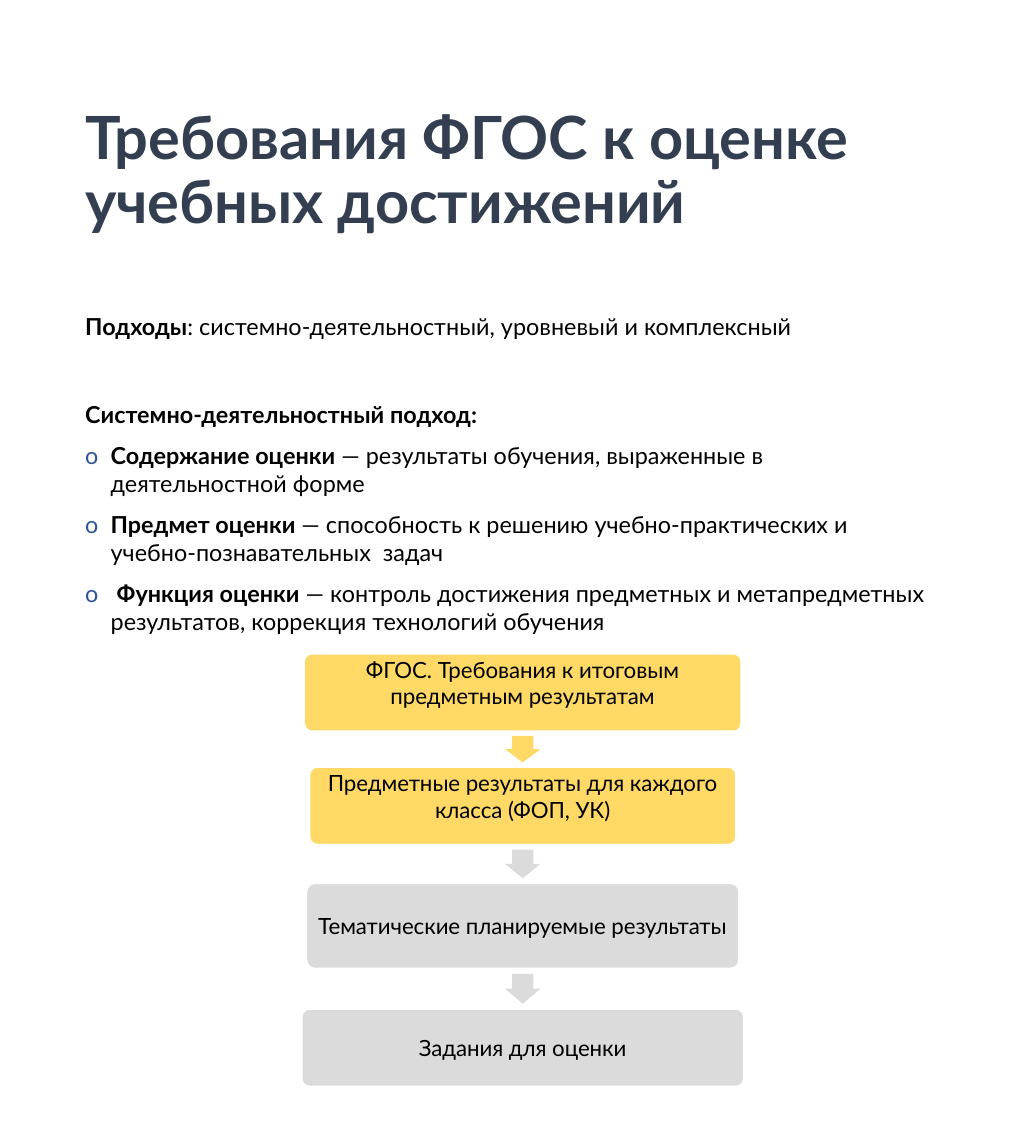
import pptx
import pptx.util
import pptx.dml.color
import pptx.enum.shapes
import pptx.enum.text
import lxml.etree

Pt = pptx.util.Pt
SHAPES = pptx.enum.shapes.MSO_SHAPE
ANCHOR = pptx.enum.text.MSO_ANCHOR
ALIGN = pptx.enum.text.PP_ALIGN

COLORS = {
    "title": "333F50",
    "text": "000000",
    "bullet": "2F5597",
    "standard": "FFD966",
    "planning": "DBDBDB",
    "outline": "FFFFFF",
}

APPROACHES = [
    (0, False, [("Подходы", True),
                (": системно-деятельностный, уровневый и комплексный", False)]),
    (28, False, [("Системно-деятельностный подход:", True)]),
    (6, True, [("Содержание оценки ", True),
               ("— результаты обучения, выраженные в деятельностной форме", False)]),
    (6, True, [("Предмет оценки ", True),
               ("— способность к решению учебно-практических и "
                "учебно-познавательных  задач", False)]),
    (6, True, [(" ", False), ("Функция оценки ", True),
               ("— контроль достижения предметных и метапредметных "
                "результатов, коррекция технологий обучения", False)]),
]

STEPS = [
    ("ФГОС. Требования к итоговым предметным результатам",
     307.4, 205.9, 36.7, "standard", ANCHOR.TOP),
    ("Предметные результаты для каждого класса (ФОП, УК)",
     360.7, 200.9, 36.7, "standard", ANCHOR.TOP),
    ("Тематические планируемые результаты",
     415.4, 203.8, 40.3, "planning", ANCHOR.MIDDLE),
    ("Задания для оценки",
     474.5, 208.1, 36.7, "planning", ANCHOR.MIDDLE),
]
FLOW_CENTER = 246
ARROW_WIDTH = 16.6


class SlideBuilder:
    font_name = "Lato"

    def __init__(self, slide):
        self.slide = slide

    def color(self, name):
        return pptx.dml.color.RGBColor.from_string(COLORS[name])

    def style(self, font, size, color="text", bold=False):
        font.name = self.font_name
        font.size = Pt(size)
        font.bold = bold
        font.color.rgb = self.color(color)

    def text_box(self, left, top, width, height, anchor=ANCHOR.TOP):
        box = self.slide.shapes.add_textbox(Pt(left), Pt(top), Pt(width), Pt(height))
        box.text_frame.word_wrap = True
        box.text_frame.vertical_anchor = anchor
        return box.text_frame

    def title(self, text, left, top, width, height):
        frame = self.text_box(left, top, width, height, ANCHOR.MIDDLE)
        frame.text = text
        para = frame.paragraphs[0]
        para.line_spacing = 0.9
        self.style(para.runs[0].font, 28, "title", True)

    def bullet(self, para):
        properties = para._p.get_or_add_pPr()
        properties.set("marL", str(Pt(12)))
        properties.set("indent", str(-Pt(12)))
        namespace = "{http://schemas.openxmlformats.org/drawingml/2006/main}"
        color = lxml.etree.SubElement(properties, namespace + "buClr")
        lxml.etree.SubElement(color, namespace + "srgbClr", val=COLORS["bullet"])
        lxml.etree.SubElement(properties, namespace + "buFont", typeface=self.font_name)
        lxml.etree.SubElement(properties, namespace + "buChar", char="o")

    def body(self, items, left, top, width, height):
        frame = self.text_box(left, top, width, height)
        for index, (space, bulleted, spans) in enumerate(items):
            para = frame.add_paragraph() if index else frame.paragraphs[0]
            if bulleted:
                self.bullet(para)
            if space:
                para.space_before = Pt(space)
            for text, bold in spans:
                span = para.add_run()
                span.text = text
                self.style(span.font, 11, bold=bold)

    def shape(self, kind, left, top, width, height, fill):
        shape = self.slide.shapes.add_shape(kind, Pt(left), Pt(top), Pt(width), Pt(height))
        shape.shadow.inherit = False
        shape.fill.solid()
        shape.fill.fore_color.rgb = self.color(fill)
        return shape

    def step(self, text, top, width, height, fill, anchor):
        box = self.shape(SHAPES.ROUNDED_RECTANGLE, FLOW_CENTER - width / 2, top,
                         width, height, fill)
        box.adjustments[0] = 0.1
        box.line.color.rgb = self.color("outline")
        box.line.width = Pt(1)
        frame = box.text_frame
        frame.word_wrap = True
        frame.vertical_anchor = anchor
        frame.margin_left = frame.margin_right = Pt(2)
        frame.margin_top = frame.margin_bottom = Pt(0)
        frame.text = text
        para = frame.paragraphs[0]
        para.alignment = ALIGN.CENTER
        self.style(para.runs[0].font, 10.5)

    def arrow(self, start, end, fill):
        height = 0.75 * (end - start)
        arrow = self.shape(SHAPES.DOWN_ARROW, FLOW_CENTER - ARROW_WIDTH / 2,
                           (start + end - height) / 2, ARROW_WIDTH, height, fill)
        arrow.adjustments[0] = 0.6
        arrow.adjustments[1] = 0.5
        arrow.line.fill.background()


def main():
    deck = pptx.Presentation()
    deck.slide_width = Pt(480)
    deck.slide_height = Pt(540)
    page = SlideBuilder(deck.slides.add_slide(deck.slide_layouts[6]))

    page.title("Требования ФГОС к оценке учебных достижений", 33, 29, 414, 104)
    page.body(APPROACHES, 33, 143.5, 414, 160)
    for step in STEPS:
        page.step(*step)
    for upper, lower in zip(STEPS, STEPS[1:]):
        page.arrow(upper[1] + upper[3], lower[1], upper[4] if upper is STEPS[0] else "planning")

    deck.save("out.pptx")


if __name__ == "__main__":
    main()
